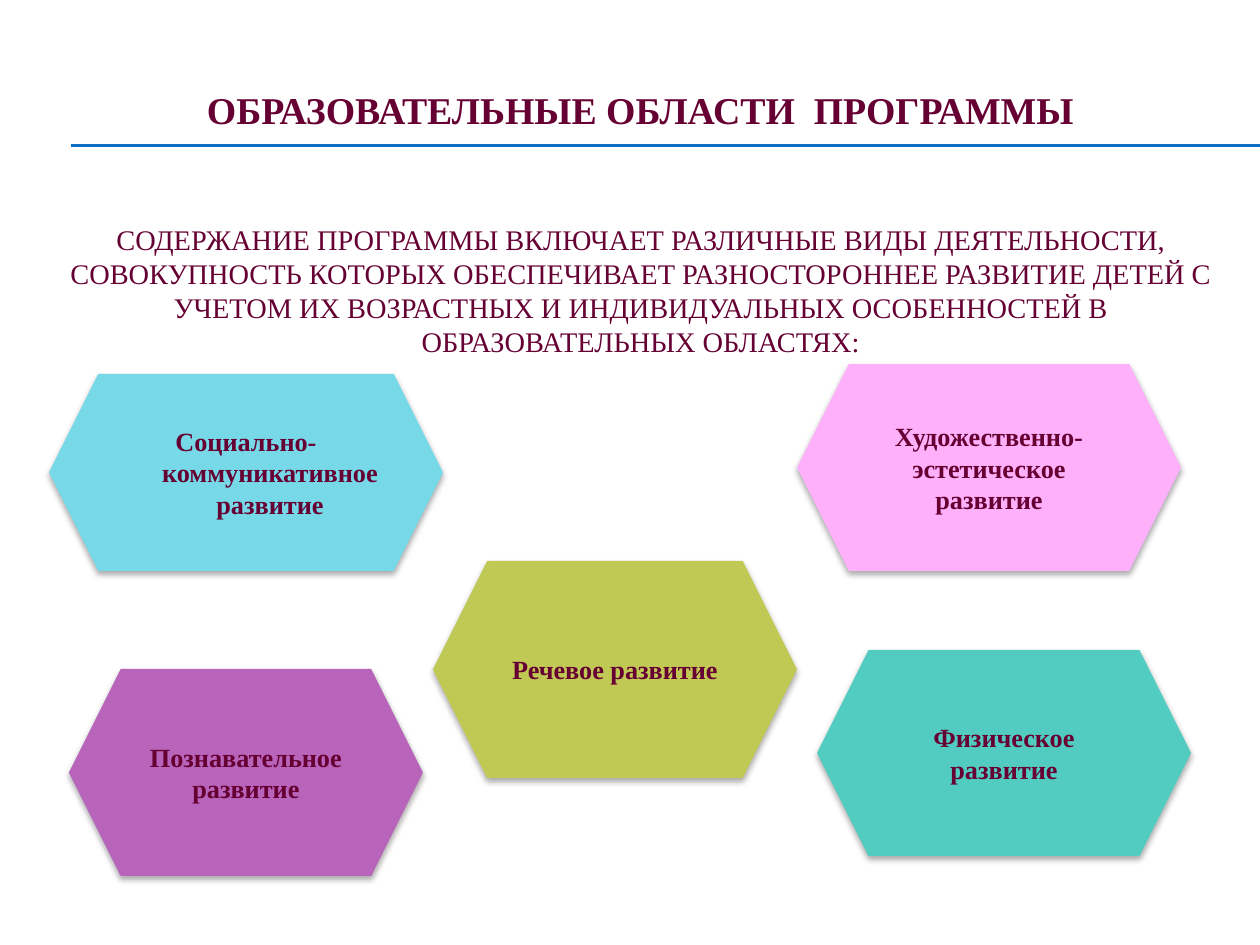
from lxml.etree import SubElement
from pptx import Presentation
from pptx.dml.color import RGBColor as RGB
from pptx.enum.shapes import MSO_CONNECTOR as CONNECTOR, MSO_SHAPE as SHAPE
from pptx.enum.text import MSO_ANCHOR as ANCHOR, PP_ALIGN as ALIGN
from pptx.oxml.ns import qn
from pptx.util import Emu, Pt

PX_PER_INCH = 126
FONT = "Times New Roman"
COLORS = {
    "text": "660033",
    "rule": "0F6FC6",
    "social": "77D9E8",
    "cognitive": "B864BA",
    "speech": "C1C955",
    "physical": "52CCC0",
    "artistic": "FEB0FA",
    "shadow": "000000",
}
AREAS = [
    ("social", "Социально-коммуникативное развитие", (49, 374, 394, 197)),
    ("cognitive", "Познавательное развитие", (69, 669, 354, 207)),
    ("speech", "Речевое развитие", (433, 561, 364, 217)),
    ("physical", "Физическое развитие", (817, 650, 374, 206)),
    ("artistic", "Художественно-эстетическое развитие", (797, 364, 384, 207)),
]
HEADING = "ОБРАЗОВАТЕЛЬНЫЕ ОБЛАСТИ  ПРОГРАММЫ"
SUMMARY = (
    "СОДЕРЖАНИЕ ПРОГРАММЫ ВКЛЮЧАЕТ РАЗЛИЧНЫЕ ВИДЫ ДЕЯТЕЛЬНОСТИ, "
    "СОВОКУПНОСТЬ КОТОРЫХ ОБЕСПЕЧИВАЕТ РАЗНОСТОРОННЕЕ РАЗВИТИЕ ДЕТЕЙ "
    "С УЧЕТОМ ИХ ВОЗРАСТНЫХ И ИНДИВИДУАЛЬНЫХ ОСОБЕННОСТЕЙ "
    "В ОБРАЗОВАТЕЛЬНЫХ ОБЛАСТЯХ:"
)


def px(length):
    """Turn pixels into EMU."""
    return Emu(round(length * 914400 / PX_PER_INCH))


def color(name):
    """Look up a named colour."""
    return RGB.from_string(COLORS[name])


def write(frame, text, size, bold):
    """Fill a text frame with one centred paragraph and return it."""
    frame.word_wrap = True
    frame.vertical_anchor = ANCHOR.MIDDLE
    frame.text = text
    paragraph = frame.paragraphs[0]
    paragraph.alignment = ALIGN.CENTER
    for run in paragraph.runs:
        run.font.name = FONT
        run.font.size = Pt(size)
        run.font.bold = bold
        run.font.color.rgb = color("text")
    return paragraph


def add_text(slide, box, text, size, bold):
    """Add a block of centred text."""
    block = slide.shapes.add_textbox(*map(px, box))
    write(block.text_frame, text, size, bold)


def add_rule(slide, y):
    """Add a thin line running to the right edge."""
    rule = slide.shapes.add_connector(CONNECTOR.STRAIGHT, px(71), px(y), px(1260), px(y))
    rule.line.color.rgb = color("rule")
    rule.line.width = Pt(0.75)
    SubElement(rule.element.spPr, qn("a:effectLst"))


def add_shadow(shape):
    """Give a shape a soft shadow falling straight down."""
    shape.shadow.inherit = False
    effects = shape.element.spPr.find(qn("a:effectLst"))
    shadow = SubElement(
        effects, qn("a:outerShdw"), blurRad=str(Pt(3.5)), dist=str(Pt(2.2)),
        dir="5400000", rotWithShape="0",
    )
    tint = SubElement(shadow, qn("a:srgbClr"), val=COLORS["shadow"])
    SubElement(tint, qn("a:alpha"), val="32000")


def add_area(slide, name, label, box):
    """Add a hexagon for one educational area and return its paragraph."""
    hexagon = slide.shapes.add_shape(SHAPE.HEXAGON, *map(px, box))
    hexagon.fill.solid()
    hexagon.fill.fore_color.rgb = color(name)
    hexagon.line.fill.background()
    add_shadow(hexagon)
    return write(hexagon.text_frame, label, 15, True)


def hang(paragraph, indent):
    """Give a paragraph a hanging indent and a small space before."""
    paragraph.space_before = Pt(3)
    properties = paragraph._p.get_or_add_pPr()
    properties.set("marL", str(px(indent)))
    properties.set("indent", str(-px(indent)))


def main():
    """Build and save the slide."""
    deck = Presentation()
    deck.slide_width, deck.slide_height = px(1260), px(945)
    slide = deck.slides.add_slide(deck.slide_layouts[6])
    for y in (145, 146):
        add_rule(slide, y)
    add_text(slide, (42, 79, 1197, 60), HEADING, 21.6, True)
    add_text(slide, (42, 210, 1197, 160), SUMMARY, 16.2, False)
    labels = {name: add_area(slide, name, label, box) for name, label, box in AREAS}
    hang(labels["social"], 48)
    deck.save("out.pptx")


if __name__ == "__main__":
    main()
